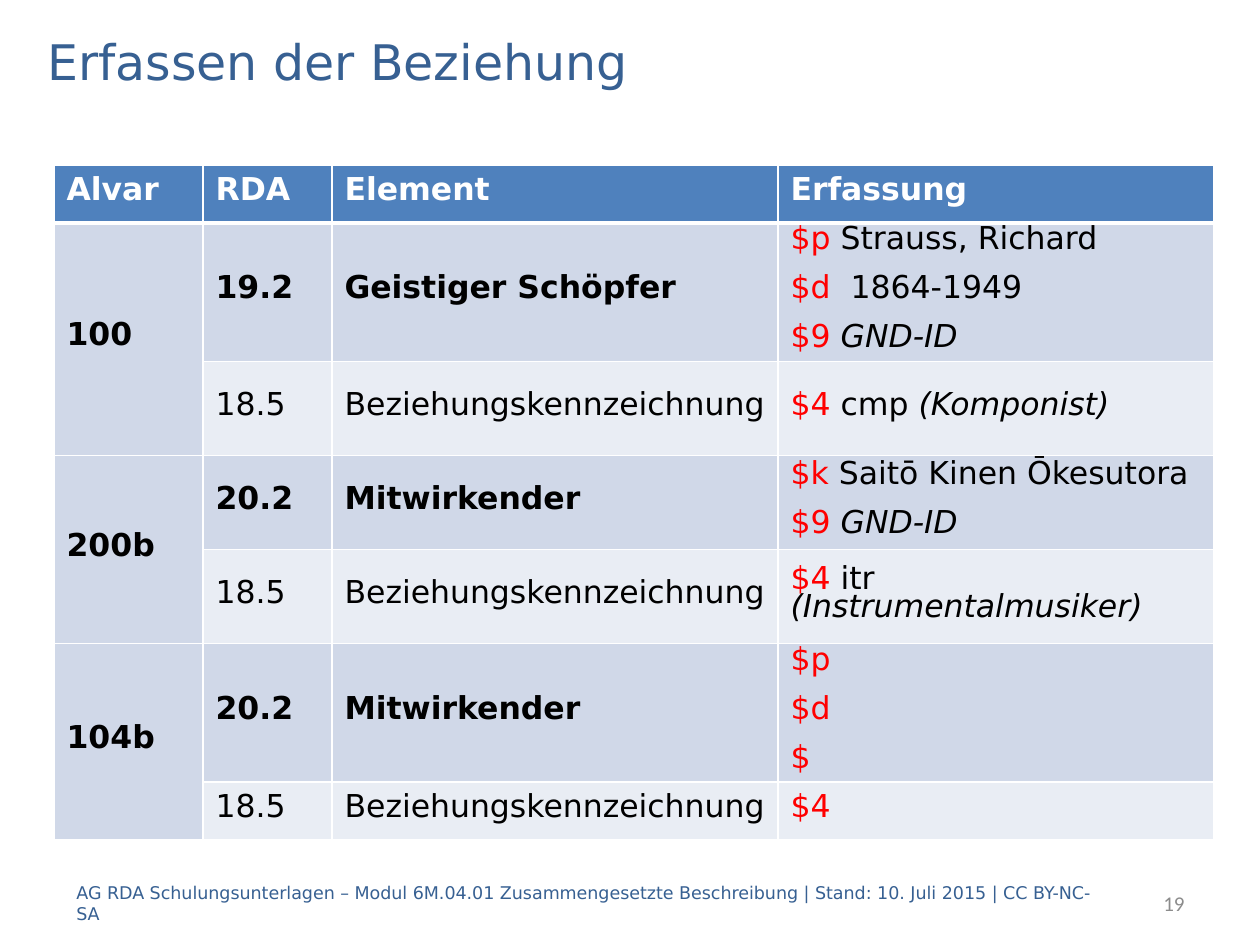
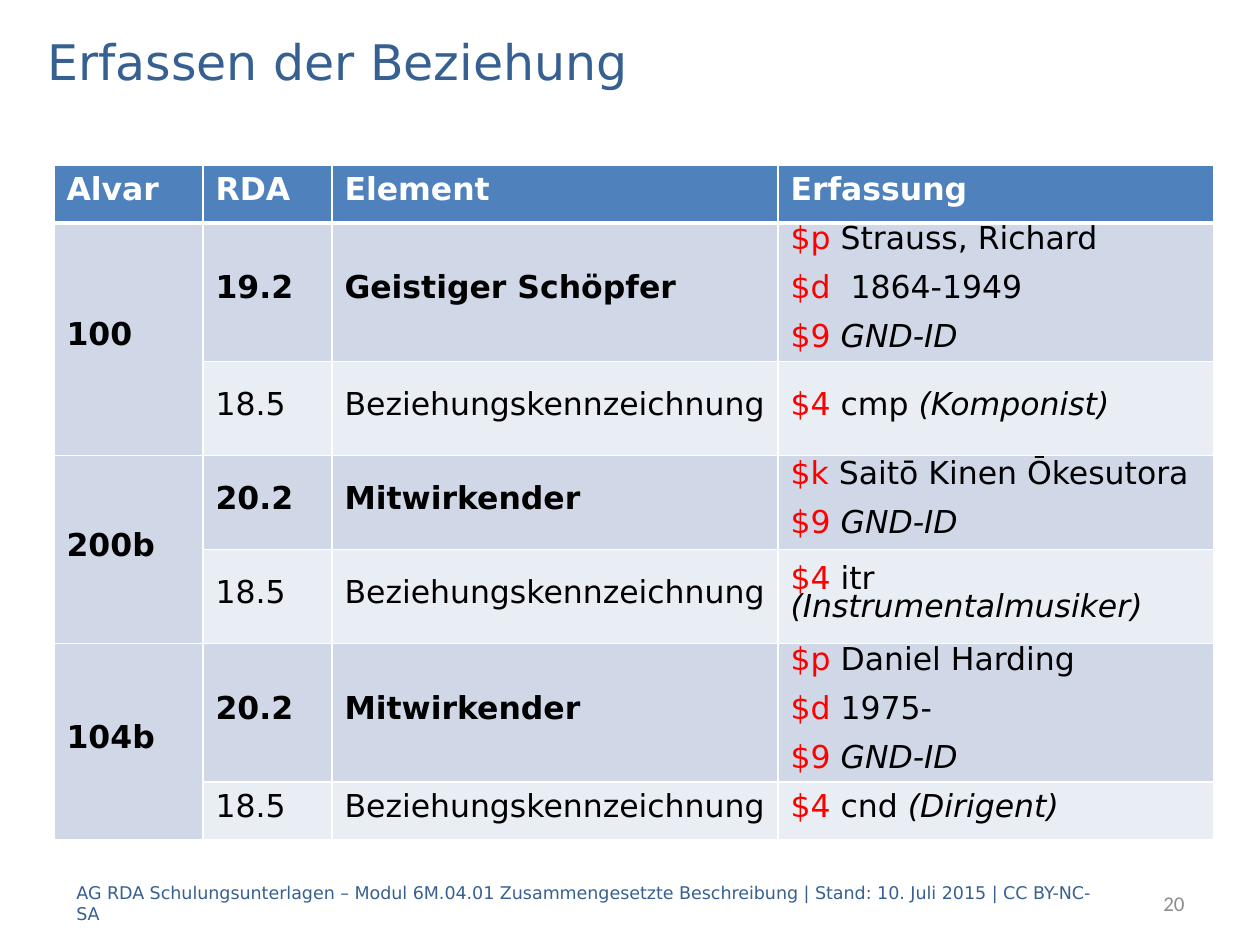
from lxml import etree
from pptx import Presentation
from pptx import util as u
from pptx.dml.color import RGBColor
from pptx.enum import text
from pptx.oxml.ns import qn

# Content: every entry line is (subfield code, value, italic part)
TITLE = "Erfassen der Beziehung"
FOOTER = ("AG RDA Schulungsunterlagen – Modul 6M.04.01 Zusammengesetzte Beschreibung"
          " | Stand: 10. Juli 2015 | CC BY-NC-SA")
HEADERS = ("Alvar", "RDA", "Element", "Erfassung")
RELATION = ("18.5", "Beziehungskennzeichnung")
CONTRIBUTOR = ("20.2", "Mitwirkender")

# Each field holds its number, its main element, and the entries of its two rows
FIELDS = [
    ("100", ("19.2", "Geistiger Schöpfer"),
     [("$p ", "Strauss, Richard", ""), ("$d ", " 1864-1949", ""), ("$9 ", "", "GND-ID")],
     [("$4 ", "cmp ", "(Komponist)")]),
    ("200b", CONTRIBUTOR,
     [("$k ", "Saitō Kinen Ōkesutora", ""), ("$9 ", "", "GND-ID")],
     [("$4 ", "itr ", "(Instrumentalmusiker)")]),
]
EXERCISE = ("104b", CONTRIBUTOR,
            [("$p", "", ""), ("$d", "", ""), ("$", "", "")],
            [("$4", "", "")])
SOLUTION = ("104b", CONTRIBUTOR,
            [("$p", " Daniel Harding", ""), ("$d", " 1975-", ""), ("$9 ", "", "GND-ID")],
            [("$4 ", "cnd ", "(Dirigent)")])
SLIDES = [("19", FIELDS + [EXERCISE]), ("20", FIELDS + [SOLUTION])]

# Shared look
PX = u.Inches(1) / 126
FONT, NUMBER_FONT = "DejaVu Sans", "Calibri"
BLUE, GREY, BLACK, WHITE, RED = "376092", "8C8C8C", "000000", "FFFFFF", "FF0000"
HEADER_FILL, MAIN_FILL, RELATION_FILL = "4F81BD", "D0D8E8", "E9EDF4"
TITLE_BOX = (35, 25, 1191, 71)
FOOTER_BOX = (64, 878, 1052, 50)
NUMBER_BOX = (997, 878, 200, 50)
TABLE_LEFT, TABLE_TOP = 54, 165
COLUMN_WIDTHS = (149, 129, 446, 436)
ROW_HEIGHTS = (58, 138, 94, 94, 94, 138, 58)
MIDDLE = text.MSO_ANCHOR.MIDDLE


def px(length):
    return u.Emu(round(length * PX))


def rgb(color):
    return RGBColor.from_string(color)


def style(run, size, color, bold=False, italic=False, font=FONT):
    run.font.name = font
    run.font.size = u.Pt(size)
    run.font.bold = bold
    run.font.italic = italic
    run.font.color.rgb = rgb(color)


def add_label(slide, box, words, size, color, font=FONT, align=text.PP_ALIGN.LEFT):
    frame = slide.shapes.add_textbox(*map(px, box)).text_frame
    frame.word_wrap = True
    frame.vertical_anchor = MIDDLE
    frame.text = words
    paragraph = frame.paragraphs[0]
    paragraph.alignment = align
    style(paragraph.runs[0], size, color, font=font)


def set_borders(cell, top=1, bottom=1):
    """White cell borders, placed before the fill as the schema asks."""
    properties = cell._tc.get_or_add_tcPr()
    widths = {"lnL": 1, "lnR": 1, "lnT": top, "lnB": bottom}
    for index, (side, width) in enumerate(widths.items()):
        line = etree.Element(qn("a:" + side), w=str(u.Pt(width)))
        fill = etree.SubElement(line, qn("a:solidFill"))
        etree.SubElement(fill, qn("a:srgbClr"), val=WHITE)
        properties.insert(index, line)


def paint(cell, color, **borders):
    cell.fill.solid()
    cell.fill.fore_color.rgb = rgb(color)
    set_borders(cell, **borders)


def write_lines(cell, lines, bold=False):
    """Body cell: fixed line pitch, red codes and italic parts."""
    cell.vertical_anchor = MIDDLE
    frame = cell.text_frame
    for index, (code, value, remark) in enumerate(lines):
        paragraph = frame.add_paragraph() if index else frame.paragraphs[0]
        paragraph.line_spacing = u.Pt(16)
        paragraph.space_before = u.Pt(6 if index else 0)
        paragraph.space_after = u.Pt(6)
        for words, color, italic in ((code, RED, False), (value, BLACK, False),
                                     (remark, BLACK, True)):
            if words:
                run = paragraph.add_run()
                run.text = words
                style(run, 18, color, bold, italic)


def add_field_table(slide, fields):
    table = slide.shapes.add_table(
        len(ROW_HEIGHTS), len(COLUMN_WIDTHS), px(TABLE_LEFT), px(TABLE_TOP),
        px(sum(COLUMN_WIDTHS)), px(sum(ROW_HEIGHTS))).table
    table.first_row = table.horz_banding = False
    for column, width in zip(table.columns, COLUMN_WIDTHS):
        column.width = px(width)
    for row, height in zip(table.rows, ROW_HEIGHTS):
        row.height = px(height)

    # Header row
    for column, header in enumerate(HEADERS):
        cell = table.cell(0, column)
        cell.text = header
        style(cell.text_frame.paragraphs[0].runs[0], 18, WHITE, bold=True)
        paint(cell, HEADER_FILL, bottom=3)

    # Two rows for each field, with the number spanning both
    for index, (number, element, entries, relations) in enumerate(fields):
        first = 1 + 2 * index
        pair = ((element, entries, MAIN_FILL), (RELATION, relations, RELATION_FILL))
        for row, (labels, lines, fill) in enumerate(pair, first):
            main = row == first
            for column, label in enumerate(labels, 1):
                write_lines(table.cell(row, column), [("", label, "")], bold=main)
            write_lines(table.cell(row, 3), lines)
            for column in range(len(HEADERS)):
                paint(table.cell(row, column), fill if column else MAIN_FILL,
                      top=3 if row == 1 else 1)
        number_cell = table.cell(first, 0)
        number_cell.merge(table.cell(first + 1, 0))
        write_lines(number_cell, [("", number, "")], bold=True)


def main():
    presentation = Presentation()
    presentation.slide_width, presentation.slide_height = px(1260), px(945)
    for number, fields in SLIDES:
        slide = presentation.slides.add_slide(presentation.slide_layouts[6])
        add_label(slide, NUMBER_BOX, number, 12, GREY, NUMBER_FONT, text.PP_ALIGN.RIGHT)
        add_field_table(slide, fields)
        add_label(slide, TITLE_BOX, TITLE, 28, BLUE)
        add_label(slide, FOOTER_BOX, FOOTER, 10, BLUE)
    presentation.save("out.pptx")


if __name__ == "__main__":
    main()
